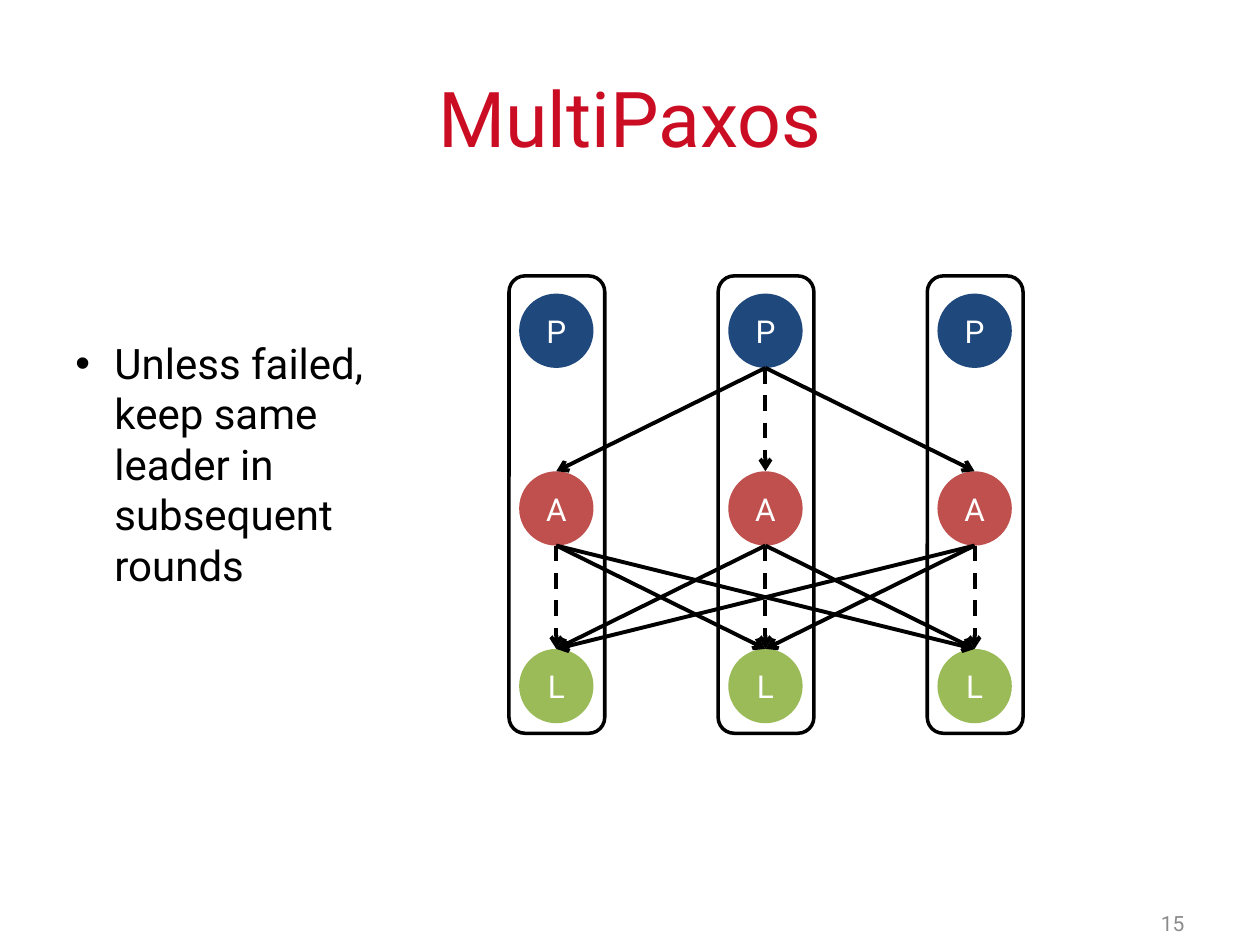
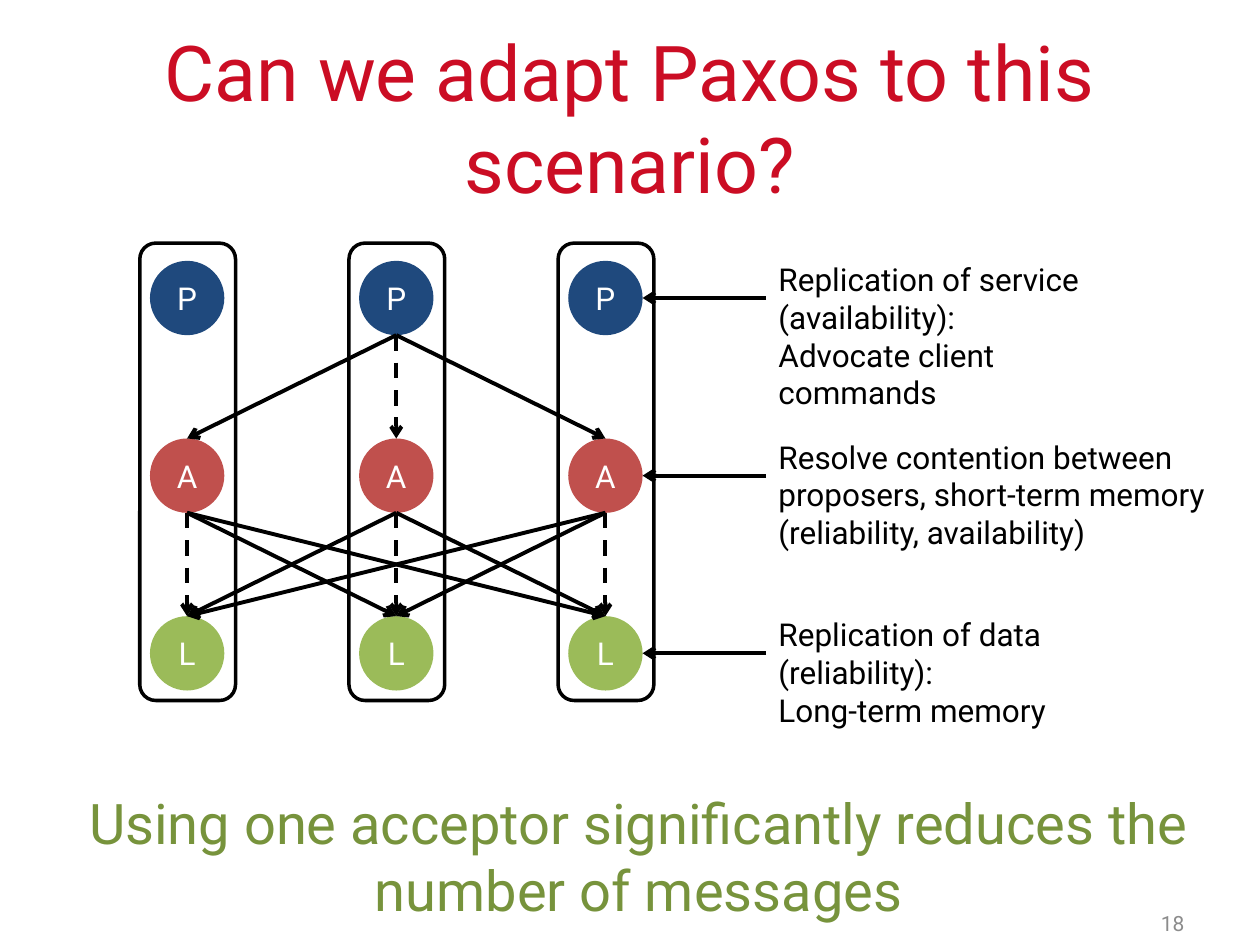
"""Build two slides on message flow between Paxos roles."""
from lxml import etree
from pptx import Presentation
from pptx.dml.color import RGBColor
from pptx.enum import dml, shapes, text
from pptx.oxml import ns
from pptx.util import Inches, Pt

FONT = "Roboto"
TITLE_RED, BLACK, WHITE, GREY = "CB0D24", "000000", "FFFFFF", "8C8C8C"
CONCLUSION_GREEN = "77933C"
ROLES = [("P", "1F497D"), ("A", "C0504D"), ("L", "9BBB59")]
SERVERS = 3
SERVER_STEP, SERVER_WIDTH, SERVER_HEIGHT = 1.66, 0.76, 3.63
ROLE_STEP, ROLE_SIZE = 1.41, 0.59
ROLE_INSET_X, ROLE_INSET_Y = 0.08, 0.14
NOTE_HEIGHT = 0.7


def color(value):
    """Return a colour from its hex string."""
    return RGBColor.from_string(value)


def format_text(frame, lines, size, fill, align, anchor):
    """Write lines into a text frame in one style."""
    frame.word_wrap = True
    frame.auto_size = text.MSO_AUTO_SIZE.NONE
    frame.vertical_anchor = anchor
    frame.text = "\n".join(lines)
    for paragraph in frame.paragraphs:
        paragraph.alignment = align
        paragraph.font.name = FONT
        paragraph.font.size = Pt(size)
        paragraph.font.color.rgb = color(fill)


def add_text(slide, box, lines, size, fill=BLACK,
             align=text.PP_ALIGN.LEFT, anchor=text.MSO_ANCHOR.TOP):
    """Add a wrapped text box and return it."""
    shape = slide.shapes.add_textbox(*map(Inches, box))
    format_text(shape.text_frame, lines, size, fill, align, anchor)
    return shape


def add_bullet(paragraph, indent):
    """Give a paragraph a bullet with a hanging indent."""
    properties = paragraph._p.get_or_add_pPr()
    properties.set("marL", str(Inches(indent)))
    properties.set("indent", str(-Inches(indent)))
    font = etree.SubElement(properties, ns.qn("a:buFont"), typeface="Arial")
    font.addnext(properties.makeelement(ns.qn("a:buChar"), {"char": "•"}))


def add_arrow(slide, start, end, dashed=False):
    """Add a straight black arrow and return it."""
    connector = slide.shapes.add_connector(
        shapes.MSO_CONNECTOR.STRAIGHT, *map(Inches, (*start, *end)))
    connector.line.color.rgb = color(BLACK)
    connector.line.width = Pt(2.25)
    if dashed:
        connector.line.dash_style = dml.MSO_LINE.DASH
    etree.SubElement(connector.line._get_or_add_ln(), ns.qn("a:tailEnd"), type="arrow")
    etree.SubElement(connector._element.spPr, ns.qn("a:effectLst"))
    return connector


def add_role(slide, left, top, letter, fill):
    """Add a lettered role circle and return it."""
    circle = slide.shapes.add_shape(
        shapes.MSO_SHAPE.OVAL, *map(Inches, (left, top, ROLE_SIZE, ROLE_SIZE)))
    circle.shadow.inherit = False
    circle.fill.solid()
    circle.fill.fore_color.rgb = color(fill)
    circle.line.fill.background()
    format_text(circle.text_frame, [letter], 18, WHITE,
                text.PP_ALIGN.CENTER, text.MSO_ANCHOR.MIDDLE)
    return circle


def add_server(slide, left, top):
    """Add a server outline holding every role and return its circles."""
    circles = [add_role(slide, left + ROLE_INSET_X,
                        top + ROLE_INSET_Y + row * ROLE_STEP, letter, fill)
               for row, (letter, fill) in enumerate(ROLES)]
    outline = slide.shapes.add_shape(
        shapes.MSO_SHAPE.ROUNDED_RECTANGLE,
        *map(Inches, (left, top, SERVER_WIDTH, SERVER_HEIGHT)))
    outline.shadow.inherit = False
    outline.fill.background()
    outline.line.color.rgb = color(BLACK)
    outline.line.width = Pt(2)
    return circles


def add_message(slide, sender, receiver):
    """Add an arrow down to a receiver, dashed within one server."""
    start, end = [((circle.left + circle.width / 2) / Inches(1), edge / Inches(1))
                  for circle, edge in ((sender, sender.top + sender.height),
                                       (receiver, receiver.top))]
    connector = add_arrow(slide, start, end, sender.left == receiver.left)
    connector.end_connect(receiver, 0)


def add_paxos_diagram(slide, left, top):
    """Add the servers and messages, and return the last server's circles."""
    servers = [add_server(slide, left + column * SERVER_STEP, top)
               for column in range(SERVERS)]
    proposers, acceptors, learners = zip(*servers)
    for acceptor in acceptors:
        add_message(slide, proposers[1], acceptor)
    for acceptor in acceptors:
        for learner in learners:
            add_message(slide, acceptor, learner)
    return servers[-1]


def add_role_note(slide, circle, width, lines):
    """Add an explanation with an arrow to its role circle."""
    left = 6.08
    middle = (circle.top + circle.height / 2) / Inches(1)
    note = add_text(slide, (left, middle - NOTE_HEIGHT / 2, width, NOTE_HEIGHT), lines, 18)
    right = (circle.left + circle.width) / Inches(1)
    connector = add_arrow(slide, (left, middle), (right, middle))
    connector.begin_connect(note, 1)


def add_slide(presentation, title, number):
    """Add a slide with its title and number."""
    slide = presentation.slides.add_slide(presentation.slide_layouts[5])
    shape = slide.shapes.title
    shape.left, shape.top, shape.width, shape.height = map(Inches, (0.5, 0.3, 9, 1.25))
    format_text(shape.text_frame, [title], 44, TITLE_RED,
                text.PP_ALIGN.CENTER, text.MSO_ANCHOR.MIDDLE)
    add_text(slide, (7.17, 7.13, 2.33, 0.4), [str(number)], 12, GREY,
             text.PP_ALIGN.RIGHT, text.MSO_ANCHOR.MIDDLE)
    return slide


def add_multipaxos_slide(presentation):
    """Add the slide on keeping one leader."""
    slide = add_slide(presentation, "MultiPaxos", 15)
    add_paxos_diagram(slide, 4.04, 2.19)
    leader_rule = add_text(slide, (0.5, 2.63, 3.11, 1.72),
                           ["Unless failed, keep same leader in subsequent rounds"], 24)
    add_bullet(leader_rule.text_frame.paragraphs[0], 0.31)


def add_adaptation_slide(presentation):
    """Add the slide on what each role is for."""
    slide = add_slide(presentation, "Can we adapt Paxos to this scenario?", 18)
    circles = add_paxos_diagram(slide, 1.11, 1.93)
    notes = [
        (2.92, ["Replication of service (availability):", "Advocate client commands"]),
        (3.66, ["Resolve contention between proposers, short-term memory "
                "(reliability, availability)"]),
        (2.56, ["Replication of data (reliability):", "Long-term memory"]),
    ]
    for circle, (width, lines) in zip(circles, notes):
        add_role_note(slide, circle, width, lines)
    add_text(slide, (0.5, 6.21, 9.14, 0.65),
             ["Using one acceptor significantly reduces the number of messages"],
             32, CONCLUSION_GREEN, text.PP_ALIGN.CENTER)


def main():
    """Build and save the presentation."""
    presentation = Presentation()
    presentation.slide_width, presentation.slide_height = Inches(10), Inches(7.5)
    add_multipaxos_slide(presentation)
    add_adaptation_slide(presentation)
    presentation.save("out.pptx")


if __name__ == "__main__":
    main()
